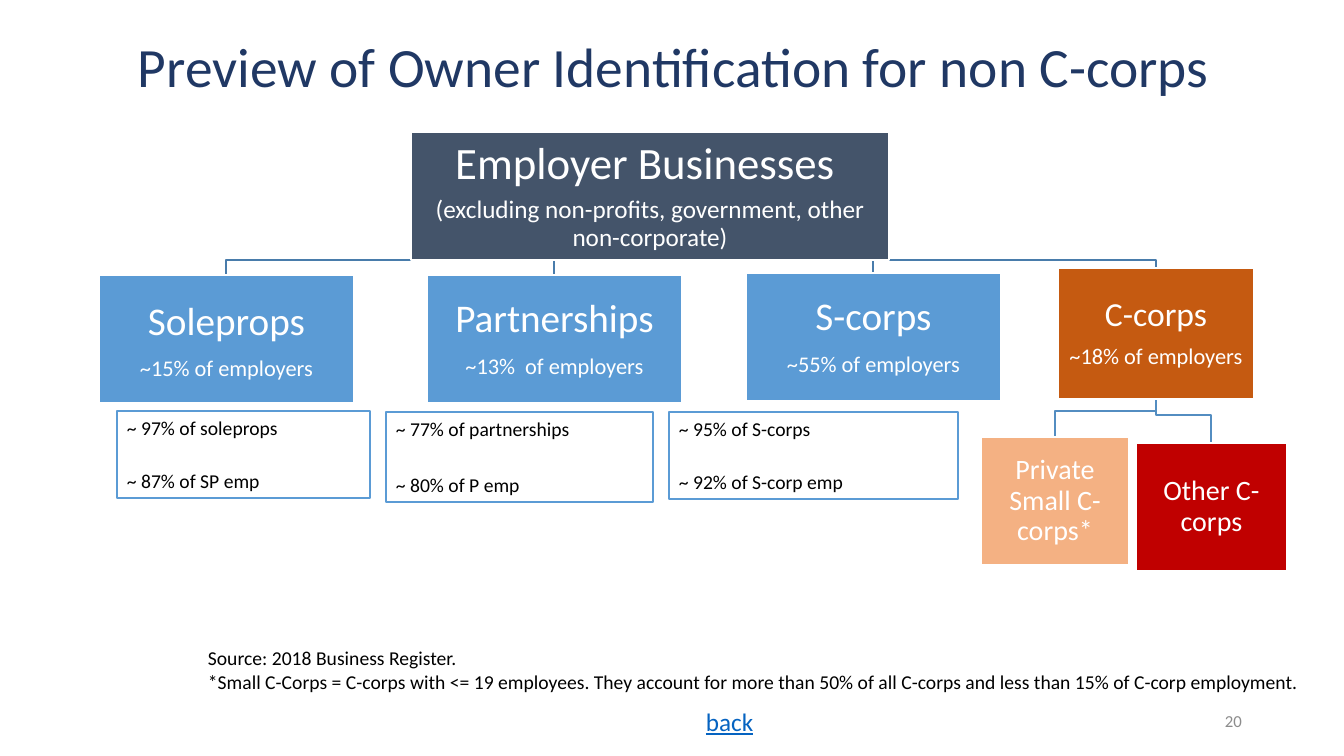
from pptx import Presentation
from pptx.dml.color import RGBColor
from pptx.enum.shapes import MSO_SHAPE
from pptx.enum.text import MSO_ANCHOR, MSO_AUTO_SIZE, PP_ALIGN
from pptx.util import Emu, Pt

PX = 12192000 / 1344
THEME = {
    "font": "Calibri",
    "title": "203864", "white": "FFFFFF", "text": "000000", "number": "8C8C8C",
    "link": "0563C1", "root": "44546A", "blue": "5B9BD5", "orange": "C55A11",
    "peach": "F4B183", "red": "C00000", "root_line": "497CAB", "leaf_line": "538DC1",
    "title_size": 39.6, "root_size": 32, "form_size": 28, "ccorp_size": 24,
    "leaf_size": 20, "root_note": 18, "share": 16, "body": 14, "small": 12, "back": 18,
}


def px(*values):
    return [Emu(round(v * PX)) for v in values]


def write(tf, lines, inset=None, anchor=MSO_ANCHOR.TOP, wrap=True):
    """Fill a text frame with (text, size, colour, paragraph format) lines."""
    tf.word_wrap, tf.vertical_anchor, tf.auto_size = wrap, anchor, MSO_AUTO_SIZE.NONE
    if inset is not None:
        for side in ("left", "top", "right", "bottom"):
            setattr(tf, f"margin_{side}", px(inset)[0])
    for i, (text, size, colour, fmt) in enumerate(lines):
        p = tf.add_paragraph() if i else tf.paragraphs[0]
        for name, value in fmt.items():
            setattr(p, name, value)
        r = p.add_run()
        r.text = text
        r.font.name, r.font.size = THEME["font"], Pt(THEME[size])
        r.font.color.rgb = RGBColor.from_string(THEME[colour])


prs = Presentation()
prs.slide_width, prs.slide_height = px(1344, 756)
s = prs.slides.add_slide(prs.slide_layouts[5])

title = s.shapes.title
title.left, title.top, title.width, title.height = px(94, 20, 1159, 99)
write(title.text_frame,
      [("Preview of Owner Identification for non C-corps", "title_size", "title",
        {"alignment": PP_ALIGN.CENTER, "line_spacing": 0.9})],
      anchor=MSO_ANCHOR.MIDDLE)

# Organisation chart: box, fill, inset, lines of (text, size, line spacing, space after)
ROOT = (411, 132, 478, 128)
CCORPS = (1058, 268, 196, 131)
SOLE, PARTNER, SCORPS = [(x, y, 255, 128) for x, y in ((99, 275), (427, 275), (746, 273))]
PRIVATE = (981, 437, 148, 128)
OTHER = (1136, 443, 151, 128)
NODES = [
    (ROOT, "root", 2, [("Employer Businesses ", "root_size", 0.9, 6),
                       ("(excluding non-profits, government, other non-corporate)",
                        "root_note", 0.9, 6)]),
    (SOLE, "blue", 2, [("Soleprops", "form_size", 1, 10),
                       ("~15% of employers", "share", 0.9, 6)]),
    (PARTNER, "blue", 2, [("Partnerships", "form_size", 0.9, 10),
                          ("~13%  of employers", "share", 0.9, 6)]),
    (SCORPS, "blue", 2, [("S-corps", "form_size", 0.9, 10),
                         ("~55% of employers", "share", 0.9, 6)]),
    (CCORPS, "orange", 2, [("C-corps", "ccorp_size", 0.9, 8),
                           ("~18% of employers", "share", 0.9, 6)]),
    (PRIVATE, "peach", 1, [("Private Small C-corps*", "leaf_size", 0.9, 7)]),
    (OTHER, "red", 1, [("Other C-corps", "leaf_size", 0.9, 7)]),
]
# Branches: parent, child, drop below the parent, colour
BRANCHES = [(CCORPS, OTHER, 16, "leaf_line"), (CCORPS, PRIVATE, 12, "leaf_line")]
BRANCHES += [(ROOT, child, 0, "root_line") for child in (CCORPS, SCORPS, PARTNER, SOLE)]

for (x, y, w, h), (cx, cy, cw, _), drop, colour in BRANCHES:
    start, end, turn = x + w // 2, cx + cw // 2, y + h + drop
    path = s.shapes.build_freeform(start, y + h, scale=PX)
    path.add_line_segments([(start, turn), (end, turn), (end, cy)], close=False)
    branch = path.convert_to_shape()
    branch.shadow.inherit = False
    branch.fill.background()
    branch.line.color.rgb = RGBColor.from_string(THEME[colour])
    branch.line.width = Pt(1)

# Shares covered: box, first line, second line, gap between them
COVERED = [
    ((386, 412, 267, 90), "~ 77% of partnerships", "~ 80% of P emp", 23),
    ((669, 412, 289, 87), "~ 95% of S-corps", "~ 92% of S-corp emp", 21),
    ((117, 411, 253, 87), "~ 97% of soleprops", "~ 87% of SP emp", 21),
]
boxes = []
for box, fill, inset, lines in NODES:
    paragraphs = [(text, size, "white", {"alignment": PP_ALIGN.CENTER, "line_spacing": ls,
                                         "space_after": Pt(after)})
                  for text, size, ls, after in lines]
    boxes.append((box, fill, "white", paragraphs, inset, MSO_ANCHOR.MIDDLE))
for box, first, second, gap in COVERED:
    paragraphs = [(first, "body", "text", {"alignment": PP_ALIGN.LEFT, "space_after": Pt(gap)}),
                  (second, "body", "text", {"alignment": PP_ALIGN.LEFT})]
    boxes.append((box, "white", "blue", paragraphs, None, MSO_ANCHOR.TOP))

for box, fill, line, paragraphs, inset, anchor in boxes:
    sp = s.shapes.add_shape(MSO_SHAPE.RECTANGLE, *px(*box))
    sp.shadow.inherit = False
    sp.fill.solid()
    sp.fill.fore_color.rgb = RGBColor.from_string(THEME[fill])
    sp.line.color.rgb = RGBColor.from_string(THEME[line])
    sp.line.width = Pt(1)
    write(sp.text_frame, paragraphs, inset, anchor)

source = s.shapes.add_textbox(*px(198, 641, 1124, 57))
write(source.text_frame,
      [("Source: 2018 Business Register.", "body", "text", {}),
       ("*Small C-Corps = C-corps with <= 19 employees. They account for more than 50% "
        "of all C-corps and less than 15% of C-corp employment.", "body", "text", {})],
      wrap=False)

back = s.shapes.add_textbox(*px(696, 701, 128, 40))
write(back.text_frame, [("back", "back", "link", {})])
back.text_frame.paragraphs[0].runs[0].font.underline = True

number = s.shapes.add_textbox(*px(950, 701, 302, 40))
write(number.text_frame, [("20", "small", "number", {"alignment": PP_ALIGN.RIGHT})],
      anchor=MSO_ANCHOR.MIDDLE)

prs.save("out.pptx")
